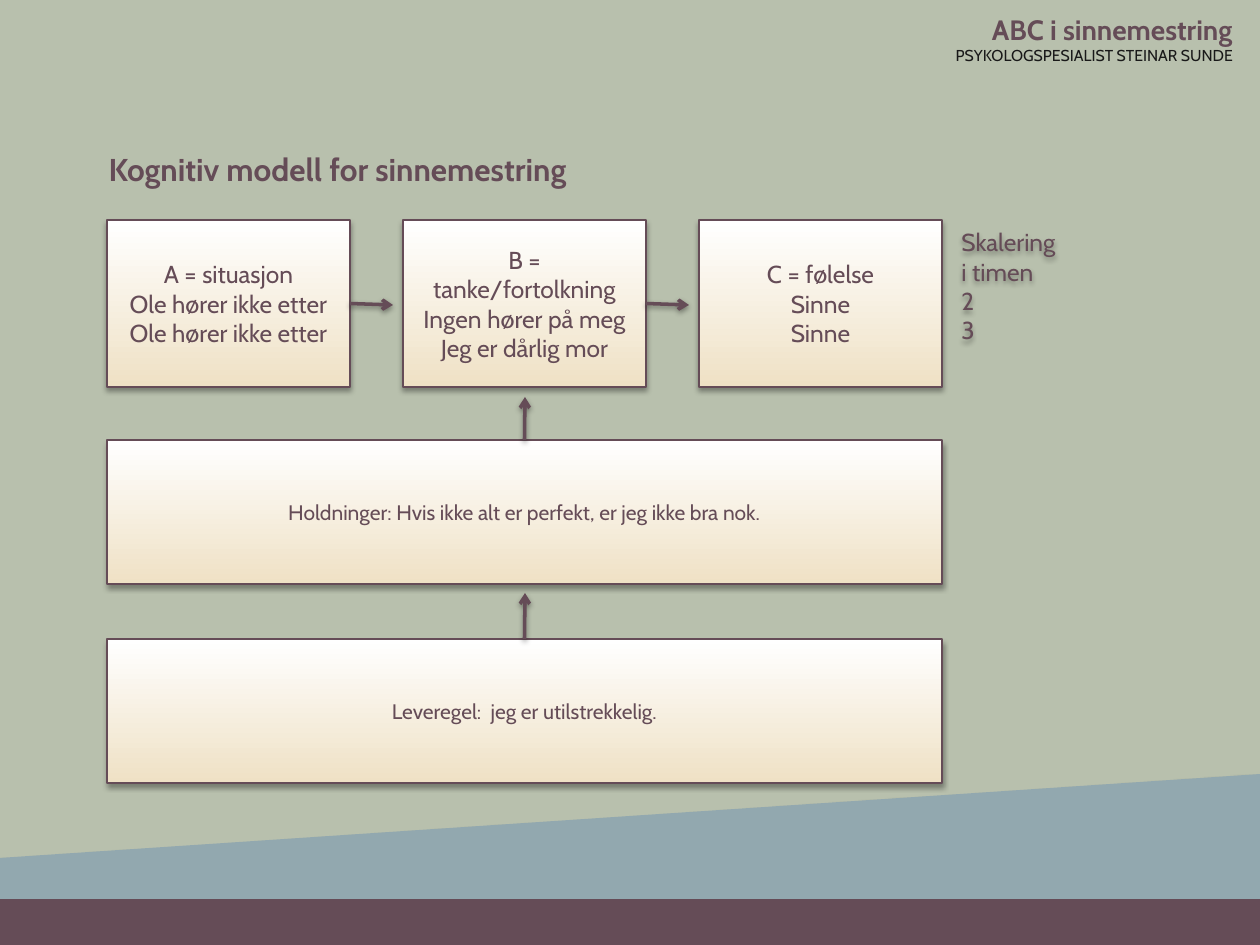
from lxml.etree import SubElement
from pptx import Presentation
from pptx.dml.color import RGBColor
from pptx.enum.shapes import MSO_CONNECTOR, MSO_SHAPE
from pptx.enum.text import MSO_ANCHOR, MSO_AUTO_SIZE, PP_ALIGN
from pptx.oxml.ns import qn
from pptx.util import Emu, Pt

PX = 914400 / 126
COLORS = {
    "sage": "B8C0AD",
    "blue": "92A8AF",
    "plum": "654C57",
    "cream": "EFE1C5",
    "white": "FFFFFF",
    "ink": "191919",
    "shadow": "000000",
}
RGB = {name: RGBColor.from_string(value) for name, value in COLORS.items()}


def write(shape, text, size=14, color="plum", bold=False, align=PP_ALIGN.LEFT):
    """Append each line of the text to the shape as a paragraph."""
    frame = shape.text_frame
    frame.word_wrap = True
    for line in text.split("\n"):
        paragraph = frame.add_paragraph() if frame.text else frame.paragraphs[0]
        paragraph.text = line
        paragraph.alignment = align
        paragraph.font.name = "Cabin"
        paragraph.font.size = Pt(size)
        paragraph.font.bold = bold
        paragraph.font.color.rgb = RGB[color]


def add_shadow(shape, alpha=35, distance=1.8):
    """Give the shape a soft shadow below; call after its fill and line are set."""
    effects = SubElement(shape._element.spPr, qn("a:effectLst"))
    outer = SubElement(effects, qn("a:outerShdw"), blurRad=str(Pt(3.1)),
                       dist=str(Pt(distance)), dir="5400000", rotWithShape="0")
    color = SubElement(outer, qn("a:srgbClr"), val=COLORS["shadow"])
    SubElement(color, qn("a:alpha"), val=str(alpha * 1000))


presentation = Presentation()
presentation.slide_width = Emu(round(1260 * PX))
presentation.slide_height = Emu(round(945 * PX))
slide = presentation.slides.add_slide(presentation.slide_layouts[5])
shapes = slide.shapes

# Background bands
backdrop = shapes.add_shape(MSO_SHAPE.RECTANGLE, 0, 0, round(1260 * PX), round(900 * PX))
builder = shapes.build_freeform(-1, 858, scale=PX)
builder.add_line_segments([(1260, 774), (1260, 942), (0, 942)], close=True)
slope = builder.convert_to_shape()
footer = shapes.add_shape(MSO_SHAPE.RECTANGLE, 0, round(899 * PX),
                          round(1260 * PX), round(46 * PX))
for band, color in ((backdrop, "sage"), (slope, "blue"), (footer, "plum")):
    band.fill.solid()
    band.fill.fore_color.rgb = RGB[color]
    band.line.fill.background()
    if band is footer:
        band.shadow.inherit = False
    else:
        add_shadow(band)

# Header
header = shapes.add_textbox(*(round(n * PX) for n in (917, 6, 328, 68)))
header.text_frame.auto_size = MSO_AUTO_SIZE.SHAPE_TO_FIT_TEXT
write(header, "ABC i sinnemestring", size=16, bold=True, align=PP_ALIGN.RIGHT)
write(header, "PSYKOLOGSPESIALIST STEINAR SUNDE", size=9, color="ink", align=PP_ALIGN.RIGHT)

# Model boxes: three in a row, then two across the full width
LEFT, TOP, BOX_WIDTH, BOX_HEIGHT, STEP = 107, 220, 243, 167, 296
FULL_WIDTH = 2 * STEP + BOX_WIDTH
row_texts = (
    "A = situasjon\nOle hører ikke etter\nOle hører ikke etter",
    "B = tanke/fortolkning\nIngen hører på meg\nJeg er dårlig mor",
    "C = følelse\nSinne\nSinne",
)
box_specs = [(text, 14, LEFT + column * STEP, TOP, BOX_WIDTH, BOX_HEIGHT)
             for column, text in enumerate(row_texts)]
box_specs += [
    ("Holdninger: Hvis ikke alt er perfekt, er jeg ikke bra nok.", 12,
     LEFT, 440, FULL_WIDTH, 144),
    ("Leveregel:  jeg er utilstrekkelig.", 12, LEFT, 639, FULL_WIDTH, 144),
]
boxes = []
for text, size, *place in box_specs:
    box = shapes.add_shape(MSO_SHAPE.RECTANGLE, *(round(n * PX) for n in place))
    box.fill.gradient()
    box.fill.gradient_angle = 90
    for stop, color in zip(box.fill.gradient_stops, ("cream", "white")):
        stop.color.rgb = RGB[color]
    box.line.color.rgb = RGB["plum"]
    box.line.width = Pt(0.75)
    add_shadow(box)
    box.text_frame.vertical_anchor = MSO_ANCHOR.MIDDLE
    write(box, text, size=size, align=PP_ALIGN.CENTER)
    boxes.append(box)
situation, thought, feeling, attitudes, life_rule = boxes

# Arrows, each starting at the middle of a box side
TOP_SIDE, RIGHT_SIDE = 0, 3
for box, side, end_x, end_y in (
    (situation, RIGHT_SIDE, 393, 305),
    (thought, RIGHT_SIDE, 689, 305),
    (attitudes, TOP_SIDE, 525, 397),
    (life_rule, TOP_SIDE, 525, 593),
):
    end = round(end_x * PX), round(end_y * PX)
    arrow = shapes.add_connector(MSO_CONNECTOR.STRAIGHT, *end, *end)
    arrow.begin_connect(box, side)
    arrow.line.color.rgb = RGB["plum"]
    arrow.line.width = Pt(2)
    SubElement(arrow._element.spPr.find(qn("a:ln")), qn("a:tailEnd"), type="arrow")
    add_shadow(arrow, alpha=38, distance=1.6)

# Title, brought in front of the background
title = shapes.title
title.left, title.top, title.width, title.height = (
    round(n * PX) for n in (96, 144, 835, 50))
title.text_frame.vertical_anchor = MSO_ANCHOR.TOP
title.text_frame.auto_size = MSO_AUTO_SIZE.SHAPE_TO_FIT_TEXT
write(title, "Kognitiv modell for sinnemestring", size=18, bold=True)
shapes._spTree.append(title._element)

# Scaling column
scaling = shapes.add_textbox(*(round(n * PX) for n in (949, 203, 175, 166)))
scaling.text_frame.vertical_anchor = MSO_ANCHOR.MIDDLE
write(scaling, "Skalering\ni timen\n2\n3")
add_shadow(scaling)

presentation.save("out.pptx")
